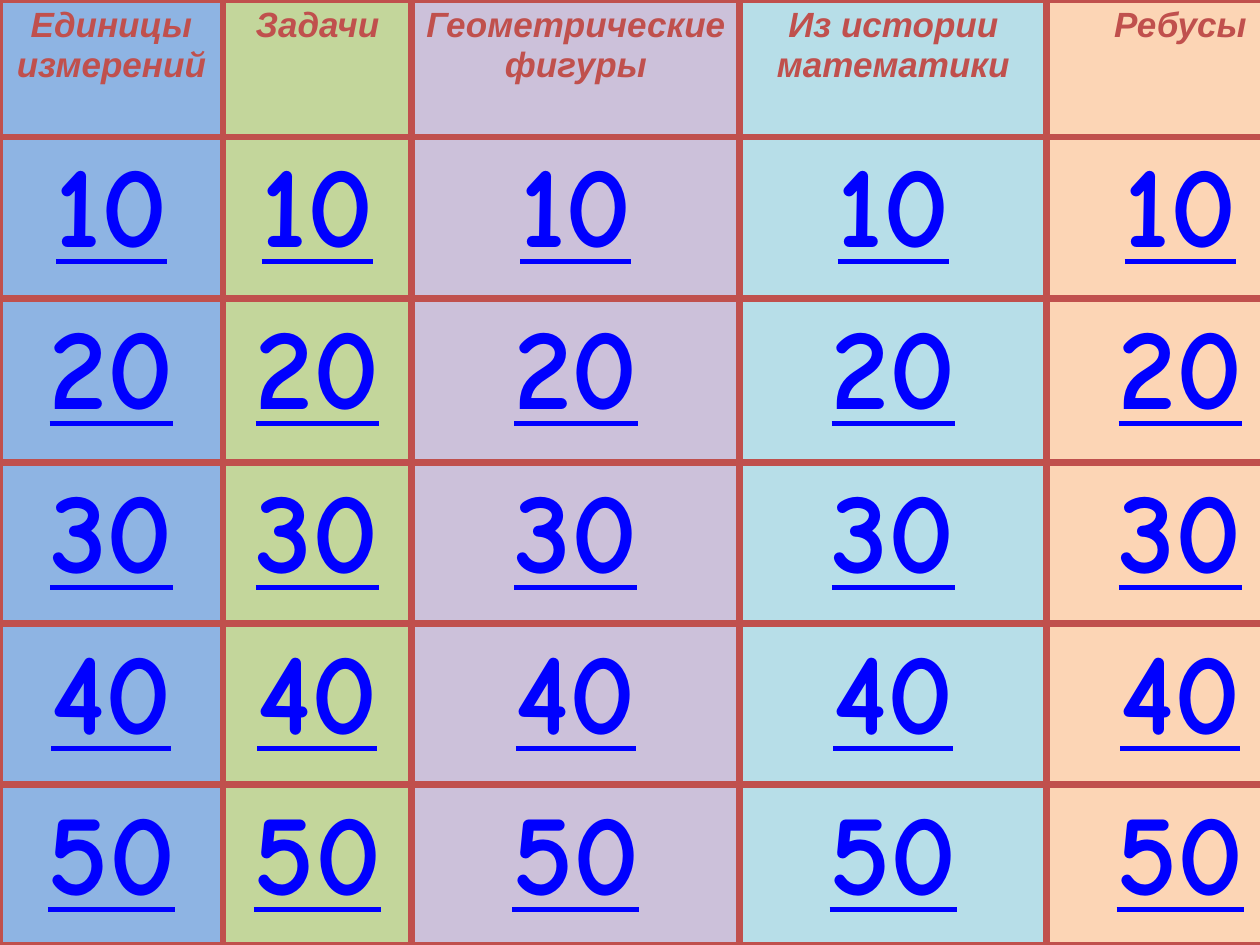
from dataclasses import dataclass

from lxml.etree import SubElement
from pptx import Presentation
from pptx.dml.color import RGBColor
from pptx.enum.text import PP_ALIGN
from pptx.oxml.ns import qn
from pptx.util import Pt

PX = 914400 // 126
SLIDE_WIDTH, SLIDE_HEIGHT = 1260, 945

# topic, column width in px, fill
TOPICS = [
    ("Единицы измерений", 223, "8EB4E3"),
    ("Задачи", 189, "C3D69B"),
    ("Геометрические фигуры", 328, "CCC1DA"),
    ("Из истории математики", 307, "B7DEE8"),
    ("Ребусы", 267, "FCD5B5"),
]
HEADER_HEIGHT = 137
# points, row height in px
SCORES = [("10", 162), ("20", 164), ("30", 161), ("40", 161), ("50", 161)]


@dataclass(frozen=True)
class TextStyle:
    font: str
    size: int
    color: str
    italic: bool = False
    underline: bool = False


@dataclass(frozen=True)
class Theme:
    header: TextStyle = TextStyle("Arial", 20, "C0504D", italic=True)
    score: TextStyle = TextStyle("Comic Neue", 66, "0000FF", underline=True)
    border: str = "C0504D"
    border_width: float = 4.5
    space_before: int = 20  # percent of a line


THEME = Theme()


def add_borders(cell):
    properties = cell._tc.get_or_add_tcPr()
    for side in ("lnL", "lnR", "lnT", "lnB"):
        line = SubElement(properties, qn(f"a:{side}"), w=str(Pt(THEME.border_width)))
        fill = SubElement(line, qn("a:solidFill"))
        SubElement(fill, qn("a:srgbClr"), val=THEME.border)


def fill_cell(cell, text, style, fill_color):
    add_borders(cell)
    cell.fill.solid()
    cell.fill.fore_color.rgb = RGBColor.from_string(fill_color)

    paragraph = cell.text_frame.paragraphs[0]
    paragraph.alignment = PP_ALIGN.CENTER
    spacing = SubElement(paragraph._p.get_or_add_pPr(), qn("a:spcBef"))
    SubElement(spacing, qn("a:spcPct"), val=str(THEME.space_before * 1000))

    run = paragraph.add_run()
    run.text = text
    font = run.font
    font.name = style.font
    font.size = Pt(style.size)
    font.bold = True
    font.italic = style.italic
    font.underline = style.underline
    font.color.rgb = RGBColor.from_string(style.color)


def add_game_board(slide):
    widths = [width for _, width, _ in TOPICS]
    heights = [HEADER_HEIGHT] + [height for _, height in SCORES]
    table = slide.shapes.add_table(
        len(heights), len(widths), 0, 0, sum(widths) * PX, sum(heights) * PX
    ).table
    table.first_row = False
    table.horz_banding = False
    for column, width in zip(table.columns, widths):
        column.width = width * PX
    for row, height in zip(table.rows, heights):
        row.height = height * PX

    for column, (topic, _, fill_color) in enumerate(TOPICS):
        fill_cell(table.cell(0, column), topic, THEME.header, fill_color)
        for row, (score, _) in enumerate(SCORES, start=1):
            fill_cell(table.cell(row, column), score, THEME.score, fill_color)


def main():
    presentation = Presentation()
    presentation.slide_width = SLIDE_WIDTH * PX
    presentation.slide_height = SLIDE_HEIGHT * PX
    blank_layout = presentation.slide_layouts[6]
    add_game_board(presentation.slides.add_slide(blank_layout))
    presentation.save("out.pptx")


if __name__ == "__main__":
    main()
